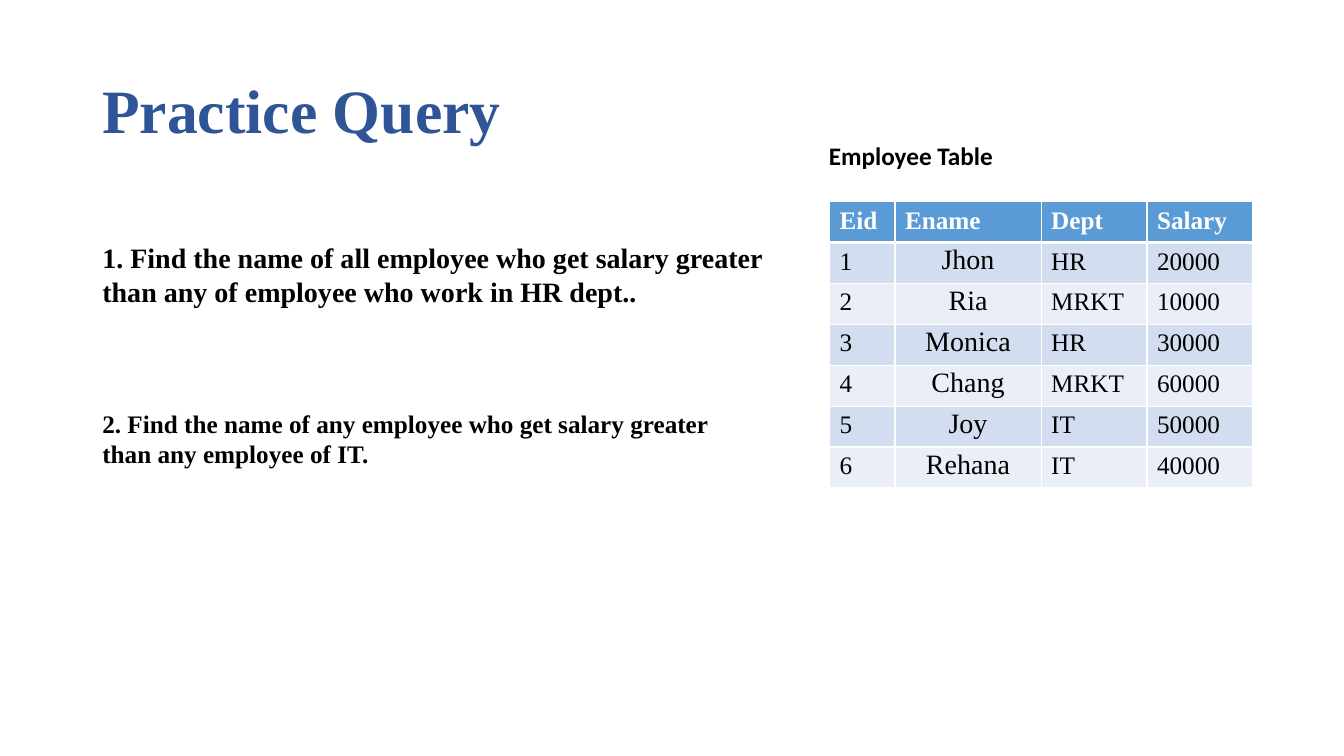
import pptx
import pptx.util
import pptx.dml.color
import pptx.enum.text
import pptx.oxml
import pptx.oxml.ns

COLS, ROWS = 160, 90
WIDTH, HEIGHT = pptx.util.Inches(13.333), pptx.util.Inches(7.5)
SERIF = "Times New Roman"
ALIGN = pptx.enum.text.PP_ALIGN
ANCHOR = pptx.enum.text.MSO_ANCHOR
STAFF = [
    ["Eid", "Ename", "Dept", "Salary"],
    ["1", "Jhon", "HR", "20000"],
    ["2", "Ria", "MRKT", "10000"],
    ["3", "Monica", "HR", "30000"],
    ["4", "Chang", "MRKT", "60000"],
    ["5", "Joy", "IT", "50000"],
    ["6", "Rehana", "IT", "40000"],
]


def across(cols):
    return round(WIDTH * cols / COLS)


def down(rows):
    return round(HEIGHT * rows / ROWS)


def color(code):
    return pptx.dml.color.RGBColor.from_string(code)


def apply(target, values):
    for name, value in values.items():
        setattr(target, name, value)


def write(frame, text, size, code="000000", bold=True, face=SERIF, **form):
    part = frame.paragraphs[0]
    apply(part, form)
    run = part.add_run()
    run.text = text
    apply(run.font, {"name": face, "size": pptx.util.Pt(size), "bold": bold})
    run.font.color.rgb = color(code)


def label(slide, box, text, size, wrap=True, anchor=ANCHOR.TOP, **style):
    x, y, w, h = box
    shape = slide.shapes.add_textbox(across(x), down(y), across(w), down(h))
    apply(shape.text_frame, {"word_wrap": wrap, "vertical_anchor": anchor})
    write(shape.text_frame, text, size, **style)


def border(cell, base):
    props = cell._tc.get_or_add_tcPr()
    space = pptx.oxml.ns.nsdecls("a")
    for spot, side in enumerate("LRTB"):
        width = pptx.util.Pt(base if side == "B" else 1)
        props.insert(spot, pptx.oxml.parse_xml(
            f'<a:ln{side} {space} w="{width}"><a:solidFill>'
            f'<a:srgbClr val="FFFFFF"/></a:solidFill></a:ln{side}>'))


def heading(slide, box):
    label(slide, box, "Practice Query", 44, anchor=ANCHOR.MIDDLE,
          code="2F5597", line_spacing=0.9)


def tasks(slide, box):
    x, y, w, h = box
    label(slide, (x, y, w, 9.25),
          "1. Find the name of all employee who get salary greater "
          "than any of employee who work in HR dept..", 20)
    label(slide, (x, y + h - 8.5, w - 7.2, 8.5),
          "2. Find the name of any employee who get salary greater "
          "than any employee of IT.", 18)


def fill(cell, text, row, col):
    cell.fill.solid()
    if row == 0:
        cell.fill.fore_color.rgb = color("5B9BD5")
        write(cell.text_frame, text, 18, "FFFFFF")
    else:
        cell.fill.fore_color.rgb = color("D2DEEF" if row % 2 else "EAEFF7")
        if col == 1:
            side = pptx.util.Inches(0.07)
            apply(cell, {"margin_left": side, "margin_right": side,
                         "margin_top": 0, "margin_bottom": 0})
            write(cell.text_frame, text, 20, bold=False,
                  alignment=ALIGN.CENTER, line_spacing=1.07)
        else:
            write(cell.text_frame, text, 18, bold=False)
    border(cell, 1 if row else 3)


def staff(slide, box):
    x, y, w, h = box
    label(slide, (x, y, 22.1, 4.8), "Employee Table", 18, wrap=False,
          face="Calibri")
    left, top = x + 1.25, y + 7.9
    wide, tall = x + w - left, y + h - top
    table = slide.shapes.add_table(
        len(STAFF), len(STAFF[0]), across(left), down(top),
        across(wide), down(tall)).table
    for column, share in zip(table.columns, (7.8, 17.4, 12.6, 12.6)):
        column.width = across(share)
    for row, names in enumerate(STAFF):
        table.rows[row].height = down(tall / len(STAFF))
        for col, text in enumerate(names):
            fill(table.cell(row, col), text, row, col)


def main():
    deck = pptx.Presentation()
    apply(deck, {"slide_width": WIDTH, "slide_height": HEIGHT})
    slide = deck.slides.add_slide(deck.slide_layouts[6])
    heading(slide, (11, 4.8, 138, 17.4))
    tasks(slide, (11, 28.1, 84.5, 28.4))
    staff(slide, (97.5, 16.1, 51.65, 42))
    deck.save("out.pptx")


if __name__ == "__main__":
    main()
